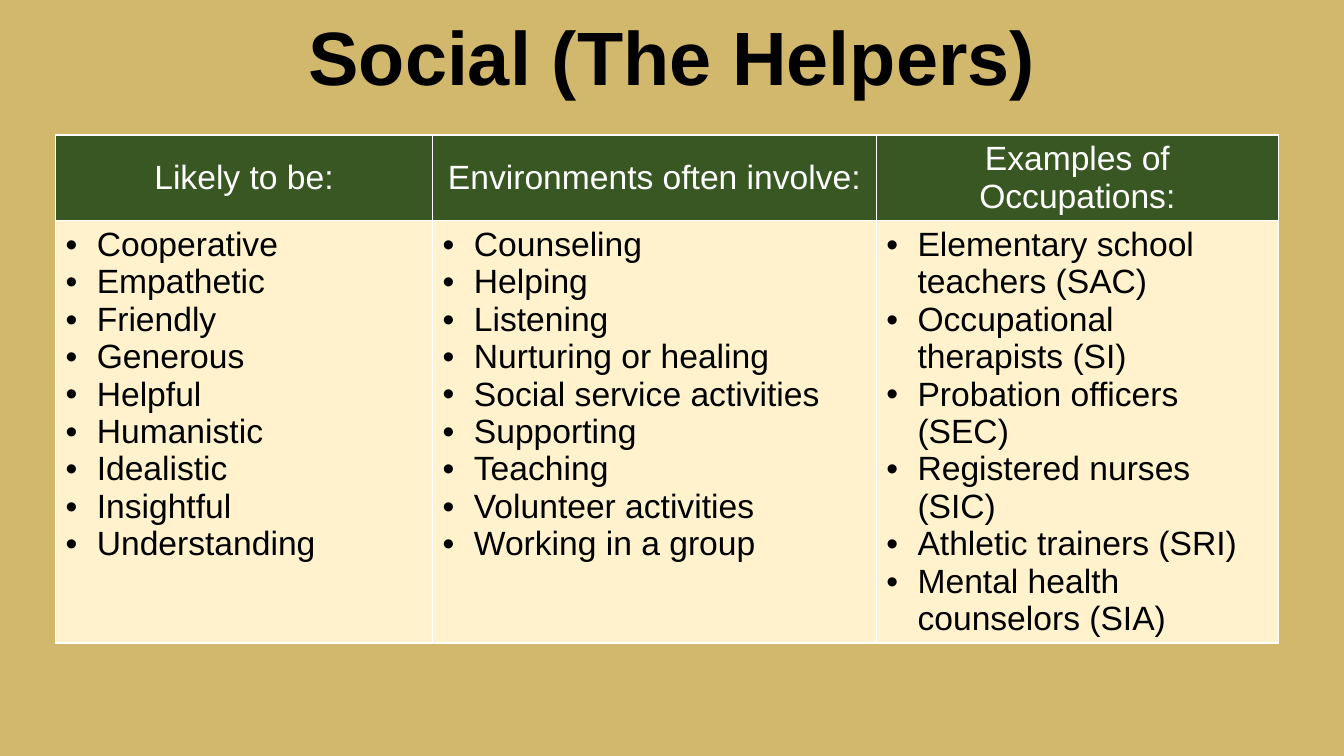
from lxml.etree import SubElement, Element
from pptx import Presentation
from pptx.dml.color import RGBColor
from pptx.enum.text import MSO_ANCHOR as Anchor, MSO_AUTO_SIZE as AutoSize, PP_ALIGN as Align
from pptx.oxml.ns import qn
from pptx.util import Inches, Pt

COLORS = {
    "background": "D1B86C",
    "header": "385723",
    "body": "FFF2CC",
    "text": "000000",
    "white": "FFFFFF",
}
TRAITS = {
    "Likely to be:": [
        "Cooperative", "Empathetic", "Friendly", "Generous", "Helpful",
        "Humanistic", "Idealistic", "Insightful", "Understanding",
    ],
    "Environments often involve:": [
        "Counseling", "Helping", "Listening", "Nurturing or healing",
        "Social service activities", "Supporting", "Teaching",
        "Volunteer activities", "Working in a group",
    ],
    "Examples of Occupations:": [
        "Elementary school teachers (SAC)", "Occupational therapists (SI)",
        "Probation officers (SEC)", "Registered nurses (SIC)",
        "Athletic trainers (SRI)", "Mental health counselors (SIA)",
    ],
}


class SlideBuilder:
    font_name = "Arial"
    title_size = 54
    table_size = 24
    bullet_indent = Inches(0.31)
    border_width = Pt(1)

    def __init__(self, presentation):
        self.width = presentation.slide_width
        self.height = presentation.slide_height
        self.slide = presentation.slides.add_slide(presentation.slide_layouts[5])
        self.paint(self.slide.background.fill, "background")

    def across(self, percent):
        return round(self.width * percent / 100)

    def down(self, percent):
        return round(self.height * percent / 100)

    def paint(self, fill, color):
        fill.solid()
        fill.fore_color.rgb = RGBColor.from_string(COLORS[color])

    def format_runs(self, paragraph, size, color, bold=False):
        for run in paragraph.runs:
            run.font.name = self.font_name
            run.font.size = Pt(size)
            run.font.bold = bold
            run.font.color.rgb = RGBColor.from_string(COLORS[color])

    def title(self, text, top, height):
        shape = self.slide.shapes.title
        shape.left, shape.top = 0, self.down(top)
        shape.width, shape.height = self.width, self.down(height)
        frame = shape.text_frame
        frame.text = text
        frame.word_wrap = True
        frame.auto_size = AutoSize.NONE
        frame.vertical_anchor = Anchor.BOTTOM
        paragraph = frame.paragraphs[0]
        paragraph.alignment = Align.CENTER
        paragraph.line_spacing = 0.9
        self.format_runs(paragraph, self.title_size, "text", bold=True)

    def borders(self, cell):
        properties = cell._tc.get_or_add_tcPr()
        for position, side in enumerate(("lnL", "lnR", "lnT", "lnB")):
            line = Element(qn(f"a:{side}"), w=str(self.border_width))
            fill = SubElement(line, qn("a:solidFill"))
            SubElement(fill, qn("a:srgbClr"), val=COLORS["white"])
            properties.insert(position, line)

    def bullet(self, paragraph):
        properties = paragraph._p.get_or_add_pPr()
        properties.set("marL", str(self.bullet_indent))
        properties.set("indent", str(-self.bullet_indent))
        SubElement(properties, qn("a:buFont"), typeface=self.font_name)
        SubElement(properties, qn("a:buChar"), char="•")

    def header_cell(self, cell, text):
        cell.text_frame.text = text
        cell.vertical_anchor = Anchor.MIDDLE
        self.paint(cell.fill, "header")
        self.borders(cell)
        paragraph = cell.text_frame.paragraphs[0]
        paragraph.alignment = Align.CENTER
        self.format_runs(paragraph, self.table_size, "white")

    def list_cell(self, cell, items):
        cell.text_frame.text = "\n".join(items)
        self.paint(cell.fill, "body")
        self.borders(cell)
        for paragraph in cell.text_frame.paragraphs:
            self.bullet(paragraph)
            self.format_runs(paragraph, self.table_size, "text")

    def table(self, lists, left, top, widths, heights):
        table = self.slide.shapes.add_table(
            len(heights), len(widths), self.across(left), self.down(top),
            self.across(sum(widths)), self.down(sum(heights)),
        ).table
        for row, height in zip(table.rows, heights):
            row.height = self.down(height)
        for index, (heading, items) in enumerate(lists.items()):
            table.columns[index].width = self.across(widths[index])
            self.header_cell(table.cell(0, index), heading)
            self.list_cell(table.cell(1, index), items)


def main():
    presentation = Presentation()
    presentation.slide_width = Inches(13.33)
    presentation.slide_height = Inches(7.5)
    builder = SlideBuilder(presentation)
    builder.title("Social (The Helpers)", top=2.27, height=11.87)
    builder.table(
        TRAITS, left=4.13, top=17.87,
        widths=(28.06, 33.01, 29.93), heights=(11.33, 55.73),
    )
    presentation.save("out.pptx")


if __name__ == "__main__":
    main()
